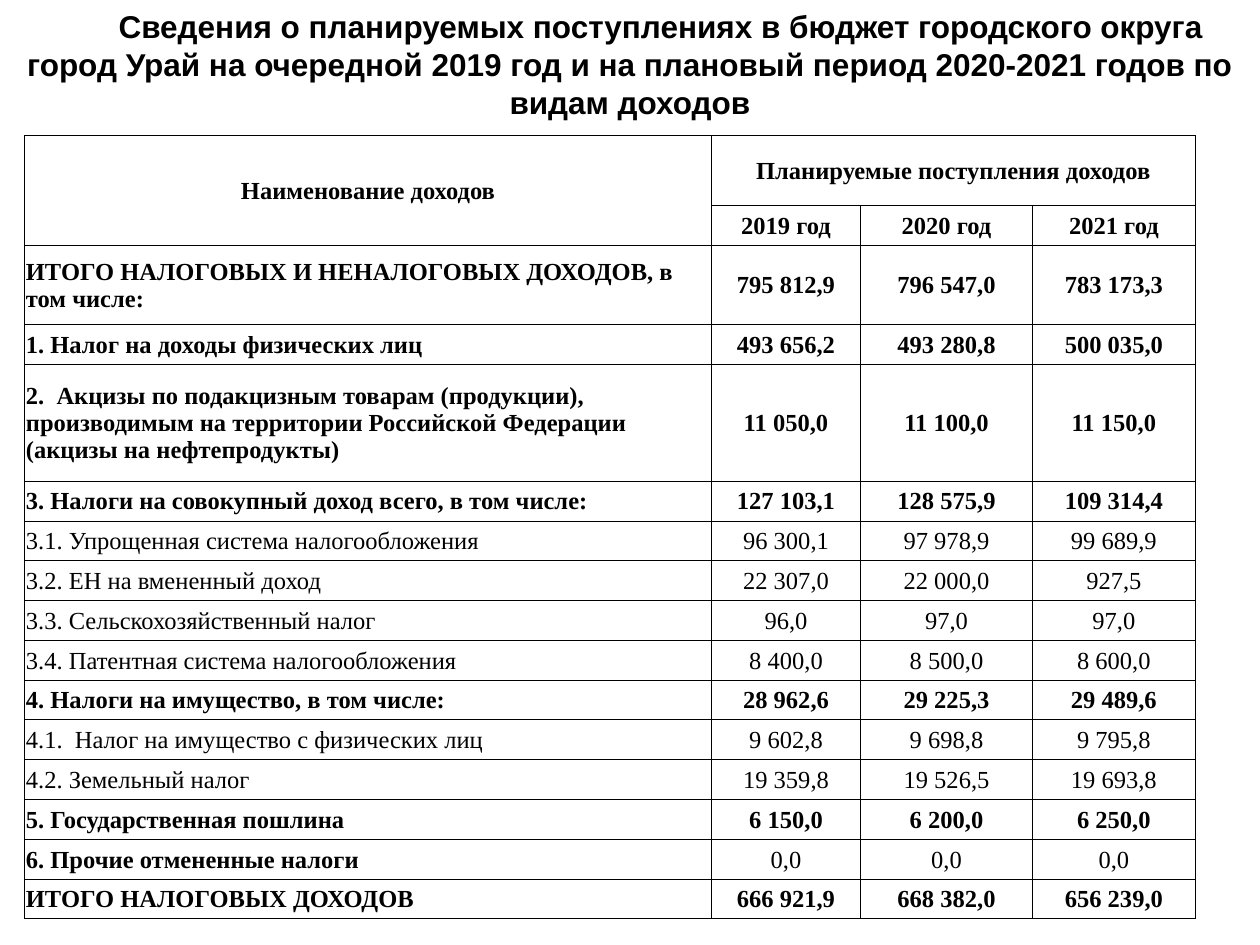
"""Build the slide with planned budget revenues of the city by type of income."""
import pptx
import pptx.dml.color
import pptx.enum.text
import pptx.oxml
import pptx.oxml.ns
import pptx.util

Pt = pptx.util.Pt
CENTER = pptx.enum.text.PP_ALIGN.CENTER
LEFT = pptx.enum.text.PP_ALIGN.LEFT

TITLE = ("Сведения о планируемых поступлениях в бюджет городского округа город Урай "
         "на очередной 2019 год и на плановый период 2020-2021 годов по видам доходов")
YEARS = ["2019 год", "2020 год", "2021 год"]
COLUMN_WIDTHS = [392.5, 85.2, 98.3, 93]
HEADER_HEIGHT, ROW_HEIGHT = 40.3, 22.75
TWO_LINES, THREE_LINES = 45, 66.9

INCOMES = [
    ("ИТОГО НАЛОГОВЫХ И НЕНАЛОГОВЫХ ДОХОДОВ, в том числе:",
     ["795 812,9", "796 547,0", "783 173,3"], True, True, TWO_LINES),
    ("1. Налог на доходы физических лиц",
     ["493 656,2", "493 280,8", "500 035,0"], True, True, ROW_HEIGHT),
    ("2.  Акцизы по подакцизным товарам (продукции), производимым на территории "
     "Российской Федерации (акцизы на нефтепродукты)",
     ["11 050,0", "11 100,0", "11 150,0"], True, True, THREE_LINES),
    ("3. Налоги на совокупный доход всего, в том числе:",
     ["127 103,1", "128 575,9", "109 314,4"], True, True, ROW_HEIGHT),
    ("3.1. Упрощенная система налогообложения",
     ["96 300,1", "97 978,9", "99 689,9"], False, False, ROW_HEIGHT),
    ("3.2. ЕН на вмененный доход",
     ["22 307,0", "22 000,0", "927,5"], False, False, ROW_HEIGHT),
    ("3.3. Сельскохозяйственный налог",
     ["96,0", "97,0", "97,0"], False, False, ROW_HEIGHT),
    ("3.4. Патентная система налогообложения",
     ["8 400,0", "8 500,0", "8 600,0"], False, False, ROW_HEIGHT),
    ("4. Налоги на имущество, в том числе:",
     ["28 962,6", "29 225,3", "29 489,6"], True, True, ROW_HEIGHT),
    ("4.1.  Налог на имущество c физических лиц",
     ["9 602,8", "9 698,8", "9 795,8"], False, False, ROW_HEIGHT),
    ("4.2. Земельный налог",
     ["19 359,8", "19 526,5", "19 693,8"], False, False, ROW_HEIGHT),
    ("5. Государственная пошлина",
     ["6 150,0", "6 200,0", "6 250,0"], True, True, ROW_HEIGHT),
    ("6. Прочие отмененные налоги",
     ["0,0", "0,0", "0,0"], True, False, ROW_HEIGHT),
    ("ИТОГО НАЛОГОВЫХ ДОХОДОВ",
     ["666 921,9", "668 382,0", "656 239,0"], True, True, ROW_HEIGHT),
]


def color(value):
    return pptx.dml.color.RGBColor.from_string(value)


def assign(target, formats):
    for name, value in formats.items():
        setattr(target, name, value)


class BudgetSlide:
    ink, paper = "000000", "FFFFFF"
    title_font = {"name": "Arial", "size": Pt(18), "bold": True}
    table_font = {"name": "Times New Roman", "size": Pt(14)}
    cell_format = {"margin_left": Pt(0.72), "margin_right": Pt(0.72),
                   "margin_top": Pt(0.72), "margin_bottom": 0,
                   "vertical_anchor": pptx.enum.text.MSO_ANCHOR.MIDDLE}

    def __init__(self, presentation):
        self.slide = presentation.slides.add_slide(presentation.slide_layouts[6])

    def add_text(self, paragraph, text, font, align):
        run = paragraph.add_run()
        run.text = text
        assign(run.font, font)
        run.font.color.rgb = color(self.ink)
        paragraph.alignment = align

    def title(self, text, left, top, width, height, indent):
        frame = self.slide.shapes.add_textbox(
            Pt(left), Pt(top), Pt(width), Pt(height)).text_frame
        frame.word_wrap = True
        heading = frame.paragraphs[0]
        heading._p.get_or_add_pPr().set("indent", str(Pt(indent)))
        heading.line_spacing = Pt(21.8)
        self.add_text(heading, text, self.title_font, CENTER)

    def table(self, left, top, widths, heights):
        table = self.slide.shapes.add_table(
            len(heights), len(widths), Pt(left), Pt(top),
            Pt(sum(widths)), Pt(sum(heights))).table
        assign(table, {"first_row": False, "horz_banding": False})
        for column, width in zip(table.columns, widths):
            column.width = Pt(width)
        for row, height in zip(table.rows, heights):
            row.height = Pt(height)
        for cell in table.iter_cells():
            self.cell_style(cell)
        return table

    def cell_style(self, cell):
        assign(cell, self.cell_format)
        properties = cell._tc.get_or_add_tcPr()
        for side in ("lnL", "lnR", "lnT", "lnB"):
            properties.append(pptx.oxml.parse_xml(
                f'<a:{side} {pptx.oxml.ns.nsdecls("a")} w="{Pt(0.5)}"><a:solidFill>'
                f'<a:srgbClr val="{self.ink}"/></a:solidFill></a:{side}>'))
        cell.fill.solid()
        cell.fill.fore_color.rgb = color(self.paper)

    def cell(self, cell, text, bold=True, align=CENTER):
        self.add_text(cell.text_frame.paragraphs[0], text,
                      {**self.table_font, "bold": bold}, align)


def main():
    presentation = pptx.Presentation()
    assign(presentation, {"slide_width": Pt(720), "slide_height": Pt(540)})
    budget = BudgetSlide(presentation)

    heights = [HEADER_HEIGHT, ROW_HEIGHT] + [income[-1] for income in INCOMES]
    revenues = budget.table(14.1, 77.3, COLUMN_WIDTHS, heights)
    revenues.cell(0, 0).merge(revenues.cell(1, 0))
    revenues.cell(0, 1).merge(revenues.cell(0, 3))
    budget.cell(revenues.cell(0, 0), "Наименование доходов")
    budget.cell(revenues.cell(0, 1), "Планируемые поступления доходов")
    for column, year in enumerate(YEARS, 1):
        budget.cell(revenues.cell(1, column), year)
    for row, (label, values, label_bold, values_bold, _) in enumerate(INCOMES, 2):
        budget.cell(revenues.cell(row, 0), label, label_bold, LEFT)
        for column, value in enumerate(values, 1):
            budget.cell(revenues.cell(row, column), value, values_bold)

    budget.title(TITLE, 0, 0, 720, 72.7, indent=35.3)
    presentation.save("out.pptx")


if __name__ == "__main__":
    main()
